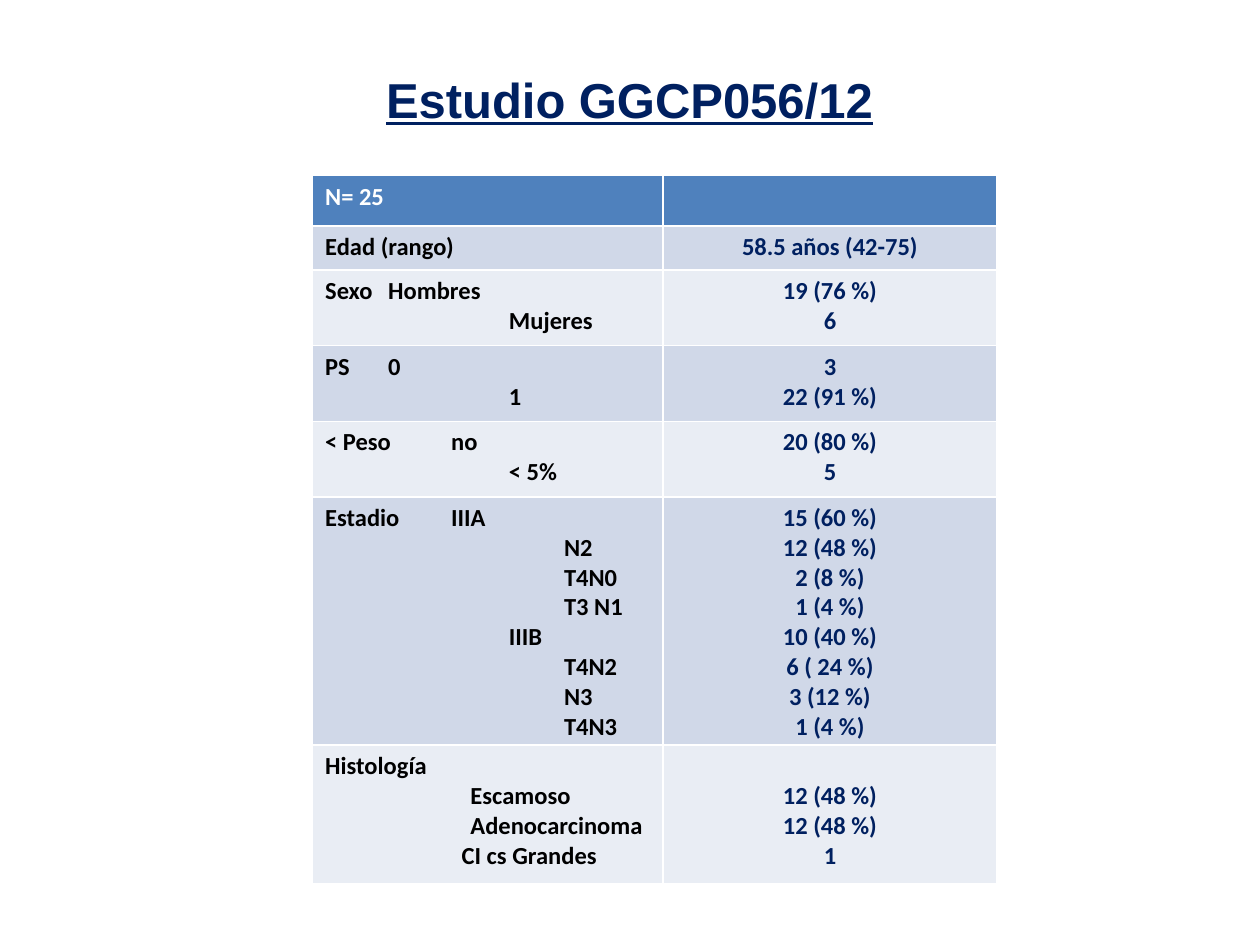
from lxml import etree
from pptx import Presentation
from pptx.dml.color import RGBColor
from pptx.enum.text import MSO_ANCHOR, MSO_AUTO_SIZE, PP_ALIGN
from pptx.oxml.ns import qn
from pptx.util import Pt

CENTER, LEFT = PP_ALIGN.CENTER, PP_ALIGN.LEFT
TITLE_ONLY = 5

COLORS = {
    "navy": "002060",
    "black": "000000",
    "white": "FFFFFF",
    "header": "4F81BD",
    "dark band": "D0D8E8",
    "light band": "E9EDF4",
}

TITLE = "Estudio GGCP056/12"

# Indents of the label column, in points
GROUP, SUBGROUP, HISTOLOGY, LARGE_CELL = 105, 136.5, 83, 78
FIRST_TAB = 103
LINE = 17.1

# Row height, label lines as (indent, text), values, lines skipped above the values
ROWS = [
    (25.2, [(0, "N= 25")], [], 0),
    (25.2, [(0, "Edad (rango)")], ["58.5 años (42-75)"], 0),
    (43.2, [(0, "Sexo\tHombres"), (GROUP, "Mujeres")], ["19 (76 %)", "6"], 0),
    (43.2, [(0, "PS\t0"), (GROUP, "1")], ["3", "22 (91 %)"], 0),
    (43.2, [(0, "< Peso\tno"), (GROUP, "< 5%")], ["20 (80 %)", "5"], 0),
    (141.8,
     [(0, "Estadio\tIIIA"), (SUBGROUP, "N2"), (SUBGROUP, "T4N0"),
      (SUBGROUP, "T3 N1"), (GROUP, "IIIB"), (SUBGROUP, "T4N2"),
      (SUBGROUP, "N3"), (SUBGROUP, "T4N3")],
     ["15 (60 %)", "12 (48 %)", "2 (8 %)", "1 (4 %)",
      "10 (40 %)", "6 ( 24 %)", "3 (12 %)", "1 (4 %)"], 0),
    (79.2,
     [(0, "Histología"), (HISTOLOGY, "Escamoso"),
      (HISTOLOGY, "Adenocarcinoma"), (LARGE_CELL, "CI cs Grandes")],
     ["12 (48 %)", "12 (48 %)", "1"], 1),
]
COLUMN_WIDTHS = [200.4, 190.6]
TABLE_LEFT, TABLE_TOP = 178.6, 100.3


def rgb(name):
    return RGBColor.from_string(COLORS[name])


def set_font(font, name, size, color):
    font.name, font.size, font.bold = name, Pt(size), True
    font.color.rgb = rgb(color)


def set_indent(para, indent):
    """Indent the whole line, or give a line with a tab its tab stop."""
    properties = para._p.get_or_add_pPr()
    properties.set("marL", str(Pt(indent)))
    properties.set("indent", "0")
    if "\t" in para.text:
        stops = etree.Element(qn("a:tabLst"))
        etree.SubElement(stops, qn("a:tab"), pos=str(Pt(FIRST_TAB)), algn="l")
        properties.insert(0, stops)


def fill_cell(cell, lines, align, color, band):
    cell.fill.solid()
    cell.fill.fore_color.rgb = rgb(band)
    frame = cell.text_frame
    for number, (indent, text) in enumerate(lines):
        para = frame.add_paragraph() if number else frame.paragraphs[0]
        para.text = text
        para.alignment = align
        set_font(para.font, "Calibri", 14, color)
        if align == LEFT:
            set_indent(para, indent)


deck = Presentation()
deck.slide_width, deck.slide_height = Pt(720), Pt(540)
page = deck.slides.add_slide(deck.slide_layouts[TITLE_ONLY])

# Title
title = page.shapes.title
title.left, title.top, title.width, title.height = Pt(211.7), Pt(36), Pt(296), Pt(41)
frame = title.text_frame
frame.text = TITLE
frame.word_wrap = False
frame.auto_size = MSO_AUTO_SIZE.SHAPE_TO_FIT_TEXT
frame.vertical_anchor = MSO_ANCHOR.TOP
heading = frame.paragraphs[0]
heading.alignment = CENTER
set_font(heading.font, "Arial", 28, "navy")
heading.font.underline = True

# Patient table
table = page.shapes.add_table(
    len(ROWS), len(COLUMN_WIDTHS), Pt(TABLE_LEFT), Pt(TABLE_TOP),
    Pt(sum(COLUMN_WIDTHS)), Pt(sum(row[0] for row in ROWS))).table
for column, width in zip(table.columns, COLUMN_WIDTHS):
    column.width = Pt(width)

for index, (height, labels, values, skipped) in enumerate(ROWS):
    table.rows[index].height = Pt(height)
    if index == 0:
        band, label_color = "header", "white"
    else:
        band, label_color = ("dark band" if index % 2 else "light band"), "black"
    label_cell, value_cell = table.cell(index, 0), table.cell(index, 1)
    fill_cell(label_cell, labels, LEFT, label_color, band)
    fill_cell(value_cell, [(0, value) for value in values], CENTER, "navy", band)
    value_cell.margin_top = Pt(3.6 + skipped * LINE)

deck.save("out.pptx")
